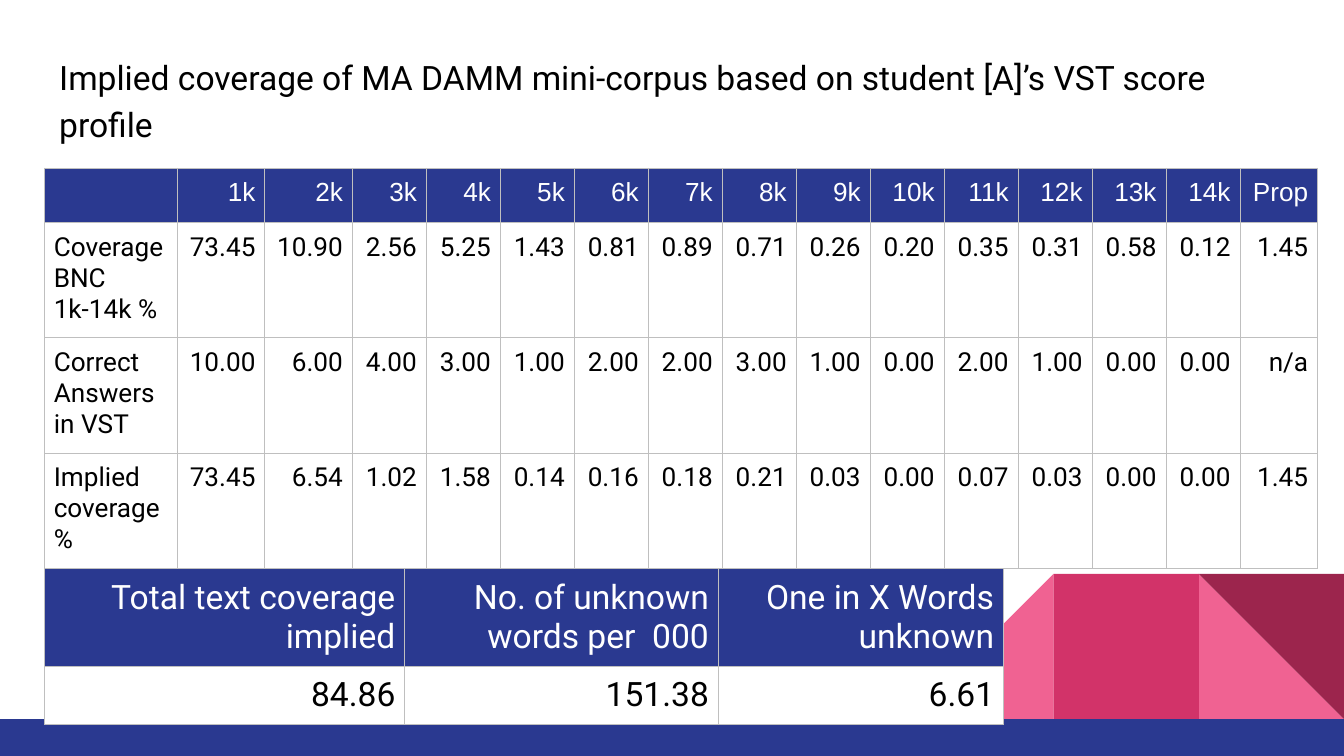
import lxml.etree
import pptx
import pptx.dml.color
import pptx.enum.shapes
import pptx.enum.text
import pptx.oxml.ns
import pptx.util

Pt = pptx.util.Pt
qn = pptx.oxml.ns.qn
SHAPE = pptx.enum.shapes.MSO_SHAPE
ALIGN = pptx.enum.text.PP_ALIGN

COLORS = {
    "blue": "2A3990",
    "light pink": "F06292",
    "pink": "D23369",
    "dark pink": "9C254D",
    "grid": "BFBFBF",
    "black": "000000",
    "white": "FFFFFF",
}


def rgb(name):
    return pptx.dml.color.RGBColor.from_string(COLORS[name])


def write_text(text_frame, text, *, size, font="Roboto", color="black",
               align=ALIGN.LEFT, line_spacing=None):
    paragraph = text_frame.paragraphs[0]
    paragraph.alignment = align
    paragraph.line_spacing = line_spacing
    if text:
        run = paragraph.add_run()
        run.text = text
        run.font.size = Pt(size)
        run.font.name = font
        run.font.color.rgb = rgb(color)
    else:
        # The end mark sets the line height of an empty cell
        lxml.etree.SubElement(paragraph._p, qn("a:endParaRPr"), sz=str(size * 100))


class SlideBuilder:
    title_size = 18
    cell_inset = Pt(5)
    border_width = Pt(0.5)

    def __init__(self, presentation):
        self.slide = presentation.slides.add_slide(presentation.slide_layouts[5])

    def title(self, text, left, top, width, height):
        shape = self.slide.shapes.title
        shape.left, shape.top = Pt(left), Pt(top)
        shape.width, shape.height = Pt(width), Pt(height)
        frame = shape.text_frame
        frame.word_wrap = True
        frame.auto_size = pptx.enum.text.MSO_AUTO_SIZE.NONE
        frame.vertical_anchor = pptx.enum.text.MSO_ANCHOR.TOP
        frame.margin_left = frame.margin_right = Pt(7.2)
        frame.margin_top = frame.margin_bottom = Pt(7.2)
        write_text(frame, text, size=self.title_size, line_spacing=1.15)

    def block(self, kind, color, left, top, width, height, rotation=0, flip=False):
        shape = self.slide.shapes.add_shape(
            kind, Pt(left), Pt(top), Pt(width), Pt(height))
        shape.shadow.inherit = False
        shape.fill.solid()
        shape.fill.fore_color.rgb = rgb(color)
        shape.line.fill.background()
        shape.rotation = rotation
        if flip:
            shape._element.spPr.find(qn("a:xfrm")).set("flipH", "1")

    def borders(self, cell):
        properties = cell._tc.get_or_add_tcPr()
        for side in ("a:lnL", "a:lnR", "a:lnT", "a:lnB"):
            line = lxml.etree.SubElement(
                properties, qn(side), w=str(int(self.border_width)))
            fill = lxml.etree.SubElement(line, qn("a:solidFill"))
            lxml.etree.SubElement(fill, qn("a:srgbClr"), val=COLORS["grid"])

    def table(self, rows, left, top, widths, heights, size,
              header_font="Roboto", label_column=False):
        table = self.slide.shapes.add_table(
            len(rows), len(widths), Pt(left), Pt(top),
            Pt(sum(widths)), Pt(sum(heights))).table
        table.first_row = table.horz_banding = False
        for column, width in zip(table.columns, widths):
            column.width = Pt(width)
        for row, height in zip(table.rows, heights):
            row.height = Pt(height)

        for row_index, row in enumerate(rows):
            header = row_index == 0
            for column_index, text in enumerate(row):
                cell = table.cell(row_index, column_index)
                cell.margin_left = cell.margin_right = self.cell_inset
                cell.margin_top = cell.margin_bottom = self.cell_inset
                self.borders(cell)
                cell.fill.solid()
                cell.fill.fore_color.rgb = rgb("blue" if header else "white")
                label = label_column and column_index == 0
                write_text(cell.text_frame, text, size=size,
                           font=header_font if header else "Roboto",
                           color="white" if header else "black",
                           align=ALIGN.LEFT if label else ALIGN.RIGHT)


def main():
    presentation = pptx.Presentation()
    presentation.slide_width = Pt(720)
    presentation.slide_height = Pt(405)
    builder = SlideBuilder(presentation)

    # Decoration along the bottom edge
    tile, bar_top = 77.8, 385.2
    tile_top = bar_top - tile
    right, middle, left = (720 - tile * count for count in (1, 2, 3))
    builder.block(SHAPE.RIGHT_TRIANGLE, "light pink", right, tile_top, tile, tile)
    builder.block(SHAPE.RIGHT_TRIANGLE, "light pink", left, tile_top, tile, tile, flip=True)
    builder.block(SHAPE.RECTANGLE, "pink", middle, tile_top, tile, tile)
    builder.block(SHAPE.RIGHT_TRIANGLE, "dark pink", right, tile_top, tile, tile, rotation=180)
    builder.block(SHAPE.RECTANGLE, "blue", 0, bar_top, 720, 405 - bar_top)

    # Title
    builder.title("Implied coverage of MA DAMM mini-corpus based on student [A]’s "
                  "VST score profile", 24.5, 20.2, 671, 47.5)

    # Coverage by frequency band
    coverage = [
        ["", *(f"{band}k" for band in range(1, 15)), "Prop"],
        ["Coverage BNC 1k-14k %", "73.45", "10.90", "2.56", "5.25", "1.43", "0.81", "0.89",
         "0.71", "0.26", "0.20", "0.35", "0.31", "0.58", "0.12", "1.45"],
        ["Correct Answers in VST", "10.00", "6.00", "4.00", "3.00", "1.00", "2.00", "2.00",
         "3.00", "1.00", "0.00", "2.00", "1.00", "0.00", "0.00", "n/a"],
        ["Implied coverage %", "73.45", "6.54", "1.02", "1.58", "0.14", "0.16", "0.18",
         "0.21", "0.03", "0.00", "0.07", "0.03", "0.00", "0.00", "1.45"],
    ]
    builder.table(coverage, 23.8, 90.2, [71.3] + [46.8] * 2 + [39.64] * 12 + [41.6],
                  [29.2] + [61.65] * 3, size=14, header_font="Arial", label_column=True)

    # Totals
    totals = [
        ["Total text coverage implied", "No. of unknown words per  000",
         "One in X Words unknown"],
        ["84.86", "151.38", "6.61"],
    ]
    builder.table(totals, 23.8, 304.7, [193, 168, 152.8], [51.5, 31], size=18)

    presentation.save("out.pptx")


if __name__ == "__main__":
    main()
